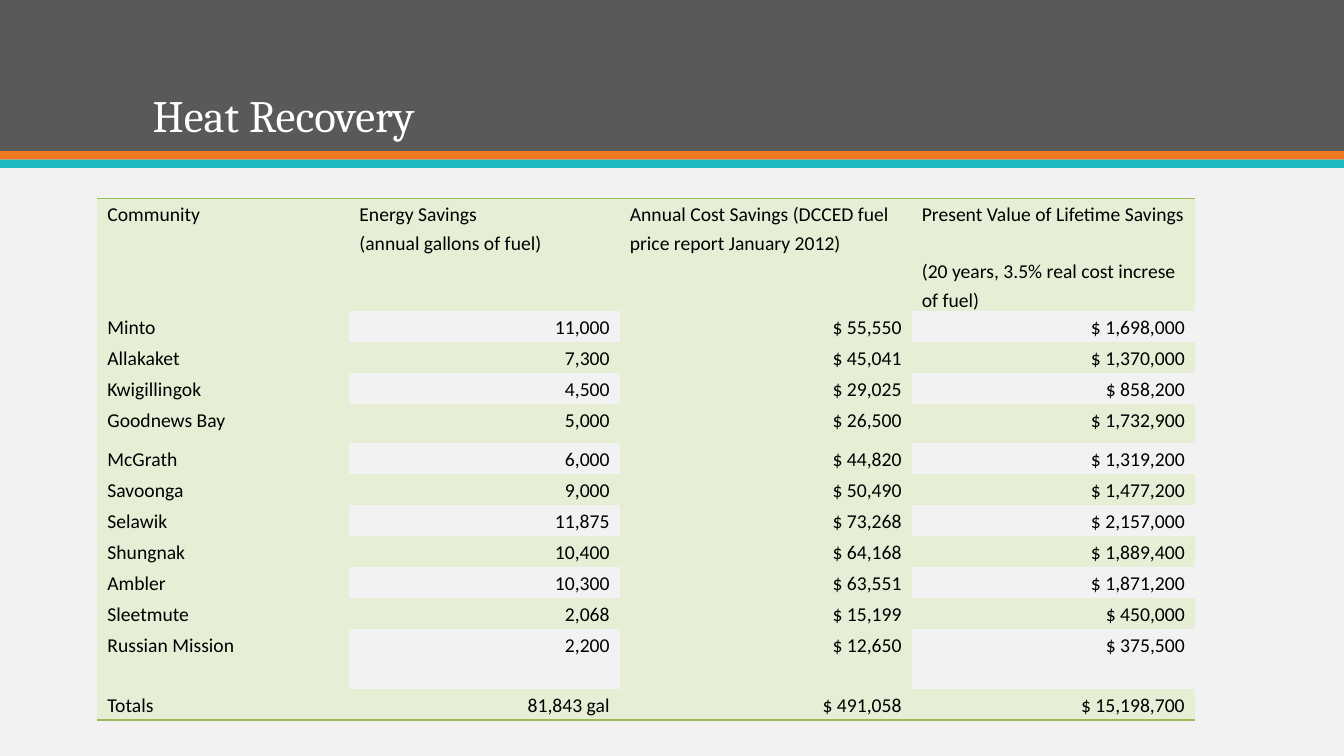
"""Build the Heat Recovery slide: a savings table under a banded title."""
from dataclasses import dataclass

from lxml import etree
from pptx import Presentation
from pptx.dml.color import RGBColor
from pptx.enum.shapes import MSO_SHAPE
from pptx.enum.text import MSO_ANCHOR, PP_ALIGN
from pptx.oxml.ns import qn
from pptx.util import Pt

RECTANGLE = MSO_SHAPE.RECTANGLE
BOTTOM = MSO_ANCHOR.BOTTOM
LEFT, RIGHT = PP_ALIGN.LEFT, PP_ALIGN.RIGHT
NO_TABLE_STYLE = "{2D5ABB26-0587-4C30-8999-92F81FD0307C}"


@dataclass(frozen=True)
class Theme:
    background: str = "F2F2F2"
    header: str = "595959"
    orange: str = "EF7920"
    teal: str = "1EB8C1"
    title: str = "FFFFFF"
    text: str = "000000"
    cell: str = "E6EED5"
    border: str = "9BBB59"
    title_font: str = "Cambria"
    body_font: str = "Calibri"
    title_size: int = 32
    body_size: int = 14


def style_paragraph(paragraph, font_name, size, color, spacing, alignment):
    paragraph.line_spacing = spacing
    paragraph.alignment = alignment
    paragraph.font.name = font_name
    paragraph.font.size = Pt(size)
    paragraph.font.color.rgb = RGBColor.from_string(color)


def add_border(cell, side):
    properties = cell._tc.get_or_add_tcPr()
    line = etree.SubElement(properties, qn(f"a:{side}"), w=str(Pt(1)))
    fill = etree.SubElement(line, qn("a:solidFill"))
    etree.SubElement(fill, qn("a:srgbClr"), val=theme.border)


theme = Theme()
presentation = Presentation()
presentation.slide_width = Pt(960)
presentation.slide_height = Pt(540)
slide = presentation.slides.add_slide(presentation.slide_layouts[6])
slide.background.fill.solid()
slide.background.fill.fore_color.rgb = RGBColor.from_string(theme.background)

bands = [(0, 108, theme.header), (108, 6, theme.orange), (114, 6, theme.teal)]
for top, height, color in bands:
    band = slide.shapes.add_shape(RECTANGLE, 0, Pt(top), Pt(960), Pt(height))
    band.shadow.inherit = False
    band.fill.solid()
    band.fill.fore_color.rgb = RGBColor.from_string(color)
    band.line.fill.background()

title = slide.shapes.add_textbox(Pt(102), Pt(24), Pt(756), Pt(81))
title.text_frame.word_wrap = True
title.text_frame.vertical_anchor = BOTTOM
title.text_frame.text = "Heat Recovery"
style_paragraph(title.text_frame.paragraphs[0], theme.title_font,
                theme.title_size, theme.title, 0.9, LEFT)

rows = [
    ("Community", "Energy Savings \v(annual gallons of fuel)",
     "Annual Cost Savings (DCCED fuel price report January 2012)",
     "Present Value of Lifetime Savings \v(20 years, 3.5% real cost increse of fuel)"),
    ("Minto", "11,000", "$ 55,550", "$ 1,698,000"),
    ("Allakaket", "7,300", "$ 45,041", "$ 1,370,000"),
    ("Kwigillingok", "4,500", "$ 29,025", "$ 858,200"),
    ("Goodnews Bay", "5,000", "$ 26,500", "$ 1,732,900"),
    ("McGrath", "6,000", "$ 44,820", "$ 1,319,200"),
    ("Savoonga", "9,000", "$ 50,490", "$ 1,477,200"),
    ("Selawik", "11,875", "$ 73,268", "$ 2,157,000"),
    ("Shungnak", "10,400", "$ 64,168", "$ 1,889,400"),
    ("Ambler", "10,300", "$ 63,551", "$ 1,871,200"),
    ("Sleetmute", "2,068", "$ 15,199", "$ 450,000"),
    ("Russian Mission", "2,200", "$ 12,650", "$ 375,500"),
    ("Totals", "81,843 gal", "$ 491,058", "$ 15,198,700"),
]
column_widths = [180, 193.2, 208.6, 202.3]
row_height = 22.25
special_heights = {"Community": 80, "Goodnews Bay": 27.4, "Russian Mission": 42.5}
row_heights = [special_heights.get(row[0], row_height) for row in rows]
last_row = len(rows) - 1

frame = slide.shapes.add_table(len(rows), len(column_widths), Pt(69.5), Pt(141.5),
                               Pt(sum(column_widths)), Pt(sum(row_heights)))
table = frame.table
table.first_row = False
table.horz_banding = False
table._tbl.tblPr.find(qn("a:tableStyleId")).text = NO_TABLE_STYLE
for column, width in zip(table.columns, column_widths):
    column.width = Pt(width)

for row_index, values in enumerate(rows):
    table.rows[row_index].height = Pt(row_heights[row_index])
    for column_index, value in enumerate(values):
        cell = table.cell(row_index, column_index)
        cell.margin_left = cell.margin_right = Pt(7.2)
        cell.margin_top = cell.margin_bottom = 0
        if row_index == 0:
            add_border(cell, "lnT")
        if row_index == last_row:
            add_border(cell, "lnB")
        if row_index % 2 and column_index % 2:
            cell.fill.background()
        else:
            cell.fill.solid()
            cell.fill.fore_color.rgb = RGBColor.from_string(theme.cell)
        paragraph = cell.text_frame.paragraphs[0]
        paragraph.text = value
        alignment = RIGHT if row_index and column_index else LEFT
        style_paragraph(paragraph, theme.body_font, theme.body_size,
                        theme.text, 1.2, alignment)

presentation.save("out.pptx")
